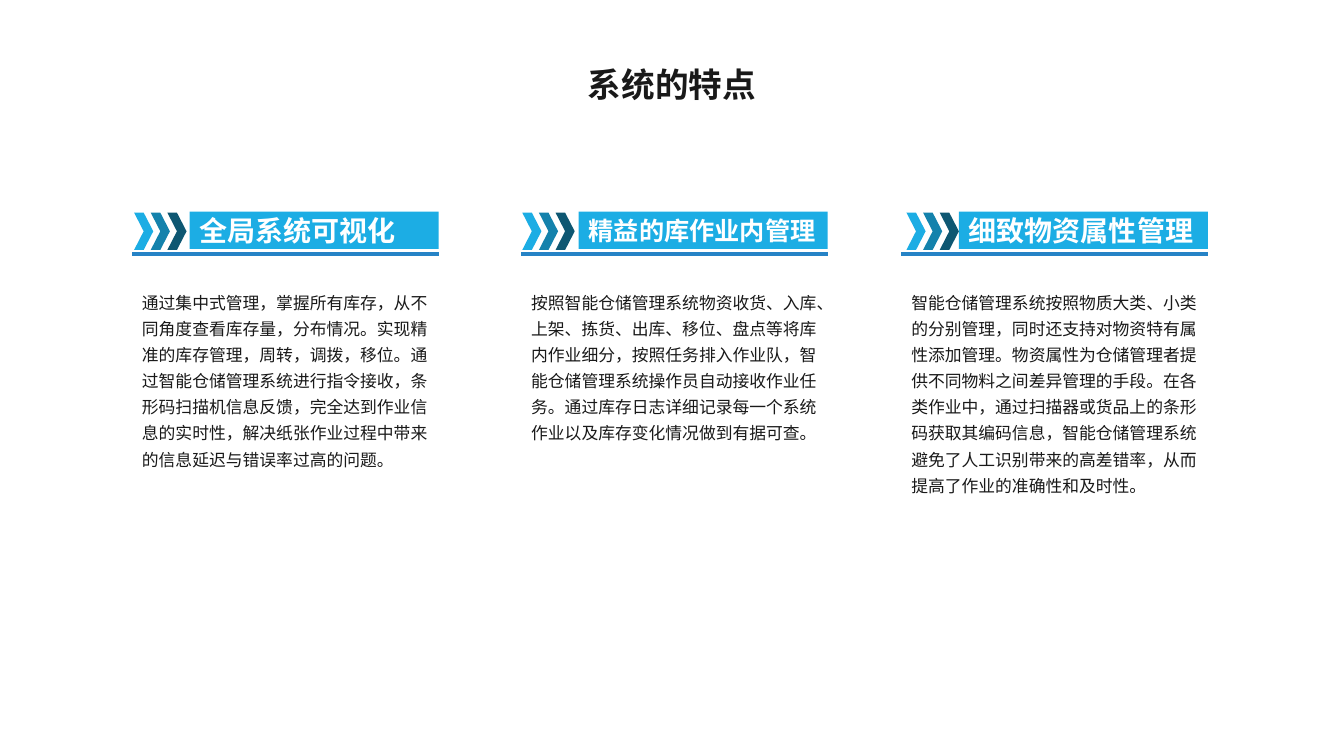
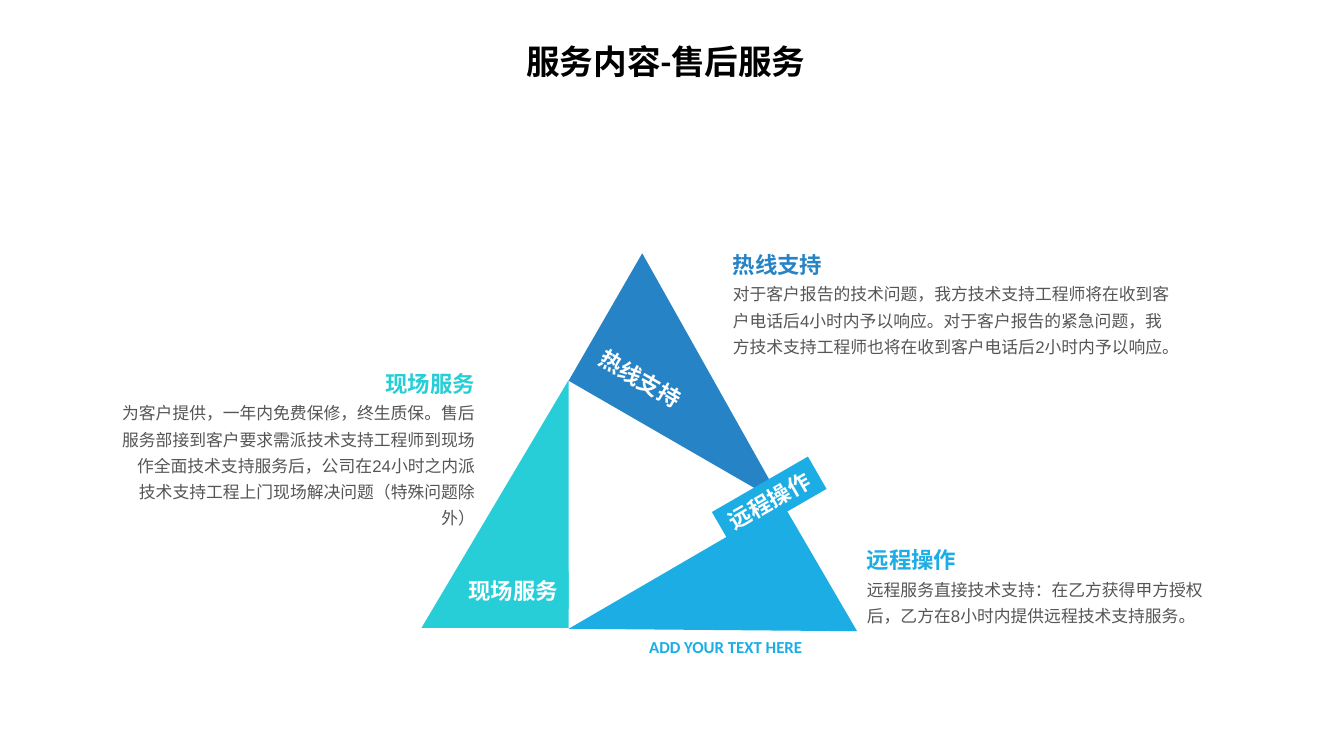
from dataclasses import dataclass

from lxml.etree import SubElement
from pptx import Presentation
from pptx.dml.color import RGBColor
from pptx.enum.shapes import MSO_CONNECTOR, MSO_SHAPE
from pptx.enum.text import MSO_ANCHOR as Anchor, MSO_AUTO_SIZE as AutoSize, PP_ALIGN as Align
from pptx.oxml.ns import qn
from pptx.util import Inches, Pt

INK = RGBColor(0x19, 0x19, 0x19)
BLACK = RGBColor(0, 0, 0)
GRAY = RGBColor(0x55, 0x55, 0x55)
WHITE = RGBColor(0xFF, 0xFF, 0xFF)
BLUE = RGBColor(0x26, 0x83, 0xC6)
SKY = RGBColor(0x1C, 0xAD, 0xE4)
TEAL = RGBColor(0x27, 0xCE, 0xD7)
ARROW_COLORS = (SKY, RGBColor(0x14, 0x82, 0xAC), RGBColor(0x0E, 0x57, 0x72))

CJK = "Noto Sans CJK SC"
TITLE_ONLY = 5
COLUMN_WIDTH = 30.4
BANNER_INDENT = 5.7
ARROW_STEP = 1.65
HEADING_RISE = 2.7
TRIANGLE_SIZE = (24.6, 14.6)
LABEL_SIZE = (11, 3.7)

TITLE = {"name": CJK, "size": Pt(24), "bold": True}
BANNER = {"name": CJK, "size": Pt(20), "bold": True}
FEATURE = {"name": CJK, "size": Pt(12), "bold": False}
HEADING = {"name": "Calibri", "size": Pt(16), "bold": True}
SERVICE = {"name": "Arial", "size": Pt(12), "bold": False}
CAPTION = {"name": "Calibri", "size": Pt(12), "bold": True}


def grid(cells: float) -> int:
    return Inches(cells / 10)


@dataclass(frozen=True)
class Box:
    column: float
    row: float
    columns: float
    rows: float

    def emu(self) -> tuple:
        return tuple(grid(n) for n in (self.column, self.row, self.columns, self.rows))


@dataclass(frozen=True)
class Feature:
    column: float
    arrow_indent: float
    heading: str
    heading_size: int
    text: str


@dataclass(frozen=True)
class Service:
    name: str
    color: RGBColor
    triangle: tuple
    turn: float
    label: tuple
    label_turn: float
    details: Box
    align: Align
    text: str


FEATURES = (
    Feature(13.1, 0.2, "全局系统可视化", 20,
            "通过集中式管理，掌握所有库存，从不同角度查看库存量，分布情况。实现精准的库存管理，"
            "周转，调拨，移位。通过智能仓储管理系统进行指令接收，条形码扫描机信息反馈，"
            "完全达到作业信息的实时性，解决纸张作业过程中带来的信息延迟与错误率过高的问题。"),
    Feature(51.7, 0.1, "精益的库作业内管理", 18,
            "按照智能仓储管理系统物资收货、入库、上架、拣货、出库、移位、盘点等将库内作业细分，"
            "按照任务排入作业队，智能仓储管理系统操作员自动接收作业任务。"
            "通过库存日志详细记录每一个系统作业以及库存变化情况做到有据可查。"),
    Feature(89.4, 0.5, "细致物资属性管理", 20,
            "智能仓储管理系统按照物质大类、小类的分别管理，同时还支持对物资特有属性添加管理。"
            "物资属性为仓储管理者提供不同物料之间差异管理的手段。在各类作业中，"
            "通过扫描器或货品上的条形码获取其编码信息，智能仓储管理系统避免了人工识别带来的高差错率，"
            "从而提高了作业的准确性和及时性。"),
)

SERVICES = (
    Service("热线支持", BLUE, (58.4, 30.3), 30, (58, 35.7), 30,
            Box(71.7, 27.1, 45.5, 8.7), Align.LEFT,
            "对于客户报告的技术问题，我方技术支持工程师将在收到客户电话后4小时内予以响应。"
            "对于客户报告的紧急问题，我方技术支持工程师也将在收到客户电话后2小时内予以响应。"),
    Service("远程操作", SKY, (58.4, 55.2), 149.8, (70.8, 47.8), 330,
            Box(85, 56.4, 36.5, 6), Align.LEFT,
            "远程服务直接技术支持：在乙方获得甲方授权后，乙方在8小时内提供远程技术支持服务。"),
    Service("现场服务", TEAL, (36.8, 42.7), 270, (45.4, 56.7), 0,
            Box(11, 38.9, 37.1, 11.3), Align.RIGHT,
            "为客户提供，一年内免费保修，终生质保。售后服务部接到客户要求需派技术支持工程师到现场"
            "作全面技术支持服务后，公司在24小时之内派技术支持工程上门现场解决问题（特殊问题除外）"),
)


def write(shape, text: str, style: dict, color: RGBColor, align: Align = Align.LEFT,
          spacing: float = 1.0, anchor: Anchor = Anchor.TOP, wrap: bool = True) -> None:
    frame = shape.text_frame
    frame_format = {"auto_size": AutoSize.NONE, "word_wrap": wrap, "vertical_anchor": anchor}
    for key, value in frame_format.items():
        setattr(frame, key, value)
    paragraph = frame.paragraphs[0]
    for key, value in {"alignment": align, "line_spacing": spacing}.items():
        setattr(paragraph, key, value)
    run = paragraph.add_run()
    run.text = text
    run.font.color.rgb = color
    for key, value in style.items():
        setattr(run.font, key, value)
    SubElement(run.font._element, qn("a:ea")).set("typeface", CJK)


def add_text(slide, box: Box, text: str, style: dict, color: RGBColor, **layout) -> None:
    write(slide.shapes.add_textbox(*box.emu()), text, style, color, **layout)


def add_block(slide, preset: MSO_SHAPE, box: Box, color: RGBColor, turn: float = 0):
    block = slide.shapes.add_shape(preset, *box.emu())
    block.shadow.inherit = False
    block.fill.solid()
    block.fill.fore_color.rgb = color
    block.line.fill.background()
    block.rotation = turn
    return block


def add_rule(slide, column: float, row: float, columns: float) -> None:
    rule = slide.shapes.add_connector(
        MSO_CONNECTOR.STRAIGHT, grid(column), grid(row), grid(column + columns), grid(row))
    rule.line.color.rgb = BLUE
    rule.line.width = Pt(3)
    SubElement(rule._element.spPr, qn("a:effectLst"))


def add_titled_slide(deck, text: str, box: Box, color: RGBColor, align: Align, font: str):
    slide = deck.slides.add_slide(deck.slide_layouts[TITLE_ONLY])
    title = slide.shapes.title
    for key, value in zip(("left", "top", "width", "height"), box.emu()):
        setattr(title, key, value)
    write(title, text, TITLE | {"name": font}, color, align=align, spacing=0.9)
    return slide


def add_feature(slide, feature: Feature) -> None:
    add_rule(slide, feature.column, 25.2, COLUMN_WIDTH)
    add_text(slide, Box(feature.column, 27.9, COLUMN_WIDTH, 21.8),
             feature.text, FEATURE, INK, spacing=1.3)
    banner = add_block(slide, MSO_SHAPE.RECTANGLE,
                       Box(feature.column + BANNER_INDENT, 21,
                           COLUMN_WIDTH - BANNER_INDENT, 3.7), SKY)
    write(banner, feature.heading, BANNER | {"size": Pt(feature.heading_size)}, WHITE,
          anchor=Anchor.MIDDLE)
    for index, color in enumerate(ARROW_COLORS):
        column = feature.column + feature.arrow_indent + index * ARROW_STEP
        add_block(slide, MSO_SHAPE.CHEVRON, Box(column, 21.1, 1.9, 3.7), color)


def add_service(slide, service: Service) -> None:
    add_block(slide, MSO_SHAPE.RIGHT_TRIANGLE, Box(*service.triangle, *TRIANGLE_SIZE),
              service.color, service.turn)
    label = add_block(slide, MSO_SHAPE.RECTANGLE, Box(*service.label, *LABEL_SIZE),
                      service.color, service.label_turn)
    write(label, service.name, HEADING, WHITE, align=Align.CENTER,
          anchor=Anchor.MIDDLE, wrap=False)
    details = service.details
    add_text(slide, details, service.text, SERVICE, GRAY, align=service.align, spacing=1.3)
    add_text(slide, Box(details.column, details.row - HEADING_RISE, details.columns, 3.7),
             service.name, HEADING, service.color, align=service.align)


def main() -> None:
    deck = Presentation()
    deck.slide_width, deck.slide_height = Inches(13.33), Inches(7.5)

    features = add_titled_slide(deck, "系统的特点", Box(52.3, 6.3, 28.7, 4.6),
                                INK, Align.CENTER, CJK)
    for feature in FEATURES:
        add_feature(features, feature)

    services = add_titled_slide(deck, "服务内容-售后服务", Box(51.2, 4, 29.8, 4.6),
                                BLACK, Align.LEFT, "Calibri")
    for service in SERVICES:
        add_service(services, service)
    add_text(services, Box(63.4, 62.7, 17.4, 3), "ADD YOUR TEXT HERE", CAPTION, SKY,
             wrap=False)

    deck.save("out.pptx")


if __name__ == "__main__":
    main()
